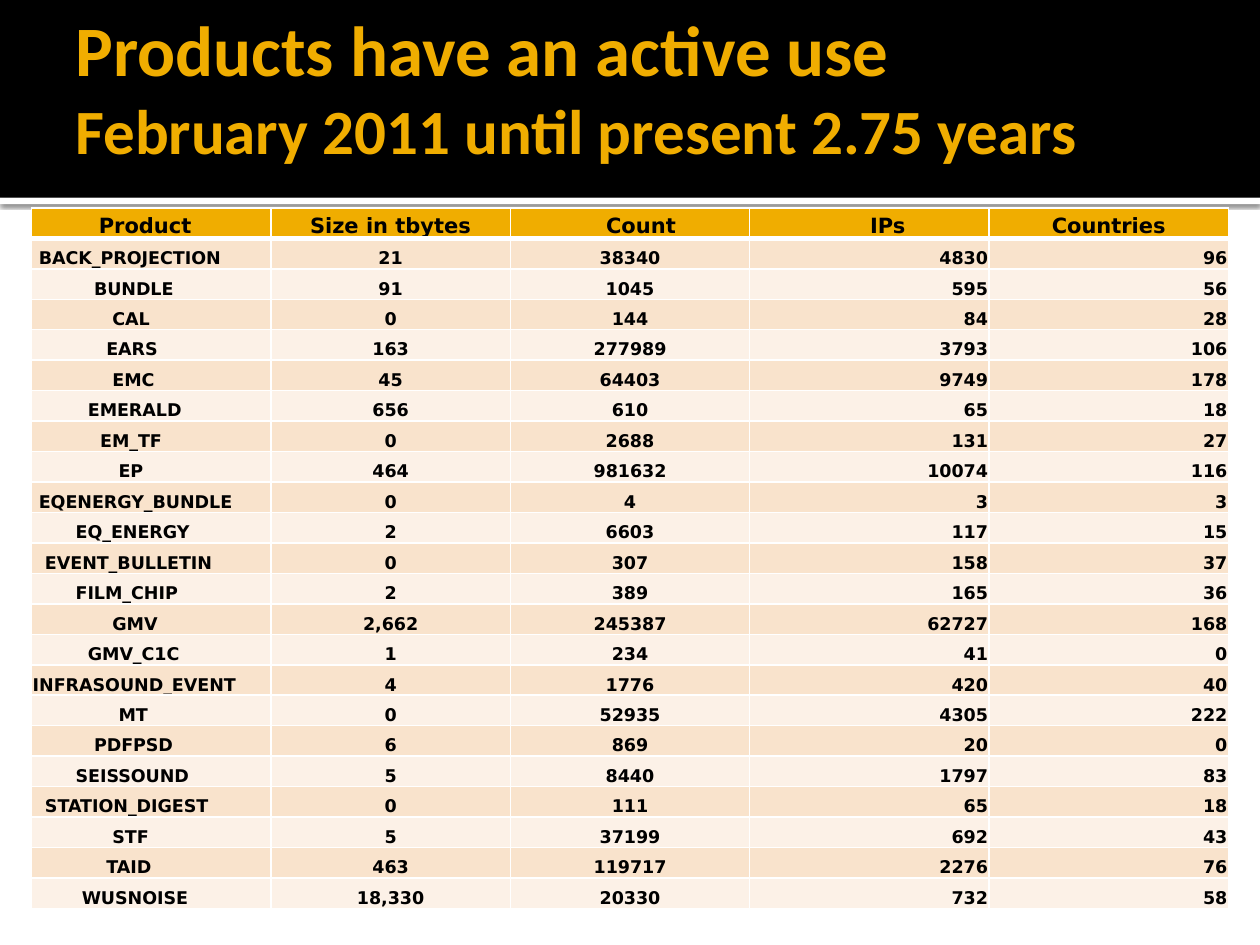
from dataclasses import dataclass
from typing import NamedTuple

from lxml import etree
from pptx import Presentation
from pptx import util as u
from pptx.dml.color import RGBColor
from pptx.enum import shapes, text
from pptx.oxml import ns


@dataclass(frozen=True)
class Theme:
    gold: str = "F0AD00"
    black: str = "000000"
    white: str = "FFFFFF"
    bands: tuple = ("F9E3CC", "FCF1E7")
    title: float = 40.5
    sub: float = 36
    head: float = 12
    body: float = 10
    title_font: str = "Calibri"
    font: str = "DejaVu Sans"
    thin: float = 1
    thick: float = 3


class Box(NamedTuple):
    col: float
    row: float
    cols: float
    rows: float


class Item(NamedTuple):
    name: str
    size: str
    count: int
    ips: int
    lands: int


THEME = Theme()
WIDTH, HEIGHT = u.Inches(10), u.Inches(7.5)
COLS, ROWS = 200, 150
NAME_CHARS = 16
SPACE = 0.35

BAND = Box(0, 0, COLS, 31.4)
RULE = Box(0, 31.4, COLS, 1)
TITLE = Box(10, 0, 180, 27.4)
GRID = Box(5, 33, 190, 111.2)

HEADS = ("Product", "Size in tbytes", "Count", "IPs", "Countries")
HEAD_PADS = (NAME_CHARS - len(HEADS[0]), 0, 3, 5, 0)
LEFT, MID, RIGHT = text.PP_ALIGN.LEFT, text.PP_ALIGN.CENTER, text.PP_ALIGN.RIGHT
HEAD_ALIGNS = (LEFT, MID, MID, MID, MID)
BODY_ALIGNS = (LEFT, MID, MID, RIGHT, RIGHT)

ITEMS = (
    Item("BACK_PROJECTION", "21", 38340, 4830, 96),
    Item("BUNDLE", "91", 1045, 595, 56),
    Item("CAL", "0", 144, 84, 28),
    Item("EARS", "163", 277989, 3793, 106),
    Item("EMC", "45", 64403, 9749, 178),
    Item("EMERALD", "656", 610, 65, 18),
    Item("EM_TF", "0", 2688, 131, 27),
    Item("EP", "464", 981632, 10074, 116),
    Item("EQENERGY_BUNDLE", "0", 4, 3, 3),
    Item("EQ_ENERGY", "2", 6603, 117, 15),
    Item("EVENT_BULLETIN", "0", 307, 158, 37),
    Item("FILM_CHIP", "2", 389, 165, 36),
    Item("GMV", "2,662", 245387, 62727, 168),
    Item("GMV_C1C", "1", 234, 41, 0),
    Item("INFRASOUND_EVENT", "4", 1776, 420, 40),
    Item("MT", "0", 52935, 4305, 222),
    Item("PDFPSD", "6", 869, 20, 0),
    Item("SEISSOUND", "5", 8440, 1797, 83),
    Item("STATION_DIGEST", "0", 111, 65, 18),
    Item("STF", "5", 37199, 692, 43),
    Item("TAID", "463", 119717, 2276, 76),
    Item("WUSNOISE", "18,330", 20330, 732, 58),
)


def place(box: Box) -> tuple:
    return (
        round(WIDTH * box.col / COLS),
        round(HEIGHT * box.row / ROWS),
        round(WIDTH * box.cols / COLS),
        round(HEIGHT * box.rows / ROWS),
    )


def add_run(para, words: str, size: float, font: str, color: str) -> None:
    run = para.add_run()
    run.text = words
    run.font.size = u.Pt(size)
    run.font.name = font
    run.font.bold = True
    run.font.color.rgb = RGBColor.from_string(color)


def add_bar(slide, box: Box, color: str):
    bar = slide.shapes.add_shape(shapes.MSO_SHAPE.RECTANGLE, *place(box))
    bar.shadow.inherit = False
    bar.fill.solid()
    bar.fill.fore_color.rgb = RGBColor.from_string(color)
    bar.line.fill.background()
    return bar


def add_shade(bar) -> None:
    effects = bar.element.spPr.find(ns.qn("a:effectLst"))
    shade = etree.SubElement(
        effects, ns.qn("a:outerShdw"), blurRad=str(u.Pt(2.5)),
        dist=str(u.Pt(0.8)), dir="5400000", algn="t", rotWithShape="0",
    )
    color = etree.SubElement(shade, ns.qn("a:srgbClr"), val=THEME.black)
    etree.SubElement(color, ns.qn("a:alpha"), val="60000")


def add_title(slide) -> None:
    frame = slide.shapes.add_textbox(*place(TITLE)).text_frame
    frame.word_wrap = True
    frame.vertical_anchor = text.MSO_ANCHOR.MIDDLE
    frame.margin_left = u.Inches(0.1)
    frame.margin_right = frame.margin_top = frame.margin_bottom = u.Inches(0.05)
    para = frame.paragraphs[0]
    add_run(para, "Products have an active use", THEME.title, THEME.title_font, THEME.gold)
    para.add_line_break()
    add_run(para, "February 2011 until present 2.75 years", THEME.sub, THEME.title_font, THEME.gold)


def add_edges(cell, top: float, base: float) -> None:
    props = cell._tc.get_or_add_tcPr()
    for side, width in zip("LRTB", (THEME.thin, THEME.thin, top, base)):
        line = etree.SubElement(props, ns.qn(f"a:ln{side}"), w=str(u.Pt(width)))
        fill = etree.SubElement(line, ns.qn("a:solidFill"))
        etree.SubElement(fill, ns.qn("a:srgbClr"), val=THEME.white)


def fill_cell(cell, words: str, size: float, align, pad: int, color: str) -> None:
    cell.fill.solid()
    cell.fill.fore_color.rgb = RGBColor.from_string(color)
    cell.vertical_anchor = text.MSO_ANCHOR.BOTTOM
    cell.margin_left = u.Inches(0.01) + u.Pt(pad * SPACE * size)
    cell.margin_right = cell.margin_top = u.Inches(0.01)
    cell.margin_bottom = 0
    para = cell.text_frame.paragraphs[0]
    para.alignment = align
    add_run(para, words, size, THEME.font, THEME.black)


def add_grid(slide) -> None:
    count = len(ITEMS) + 1
    table = slide.shapes.add_table(count, len(HEADS), *place(GRID)).table
    for row in table.rows:
        row.height = round(place(GRID)[3] / count)
    for col, words in enumerate(HEADS):
        cell = table.cell(0, col)
        add_edges(cell, THEME.thin, THEME.thick)
        fill_cell(cell, words, THEME.head, HEAD_ALIGNS[col], HEAD_PADS[col], THEME.gold)
    for row, item in enumerate(ITEMS, 1):
        color = THEME.bands[(row - 1) % 2]
        top = THEME.thick if row == 1 else THEME.thin
        for col, value in enumerate(item):
            pad = NAME_CHARS - len(item.name) if col == 0 else 0
            cell = table.cell(row, col)
            add_edges(cell, top, THEME.thin)
            fill_cell(cell, str(value), THEME.body, BODY_ALIGNS[col], pad, color)


def main() -> None:
    deck = Presentation()
    deck.slide_width, deck.slide_height = WIDTH, HEIGHT
    slide = deck.slides.add_slide(deck.slide_layouts[6])
    add_shade(add_bar(slide, RULE, THEME.white))
    add_bar(slide, BAND, THEME.black)
    add_title(slide)
    add_grid(slide)
    deck.save("out.pptx")


if __name__ == "__main__":
    main()
